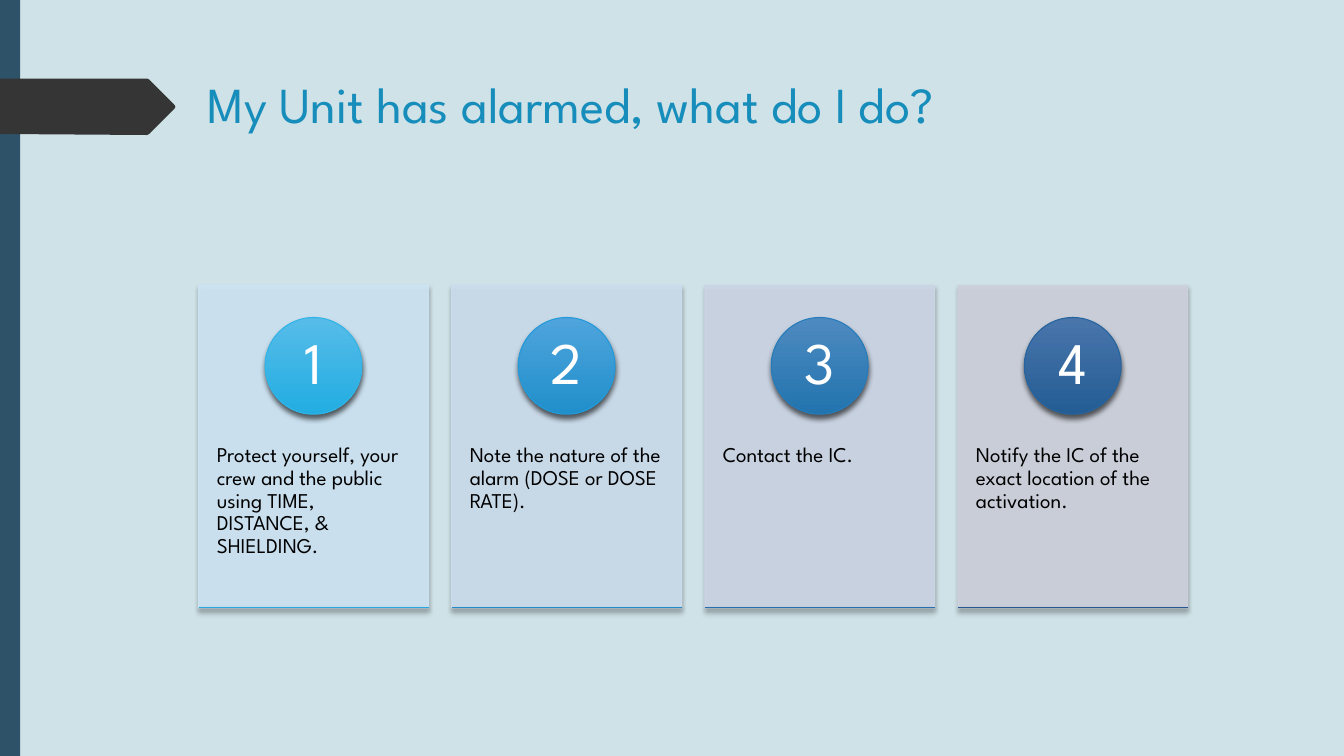
import pptx
import pptx.util
import pptx.dml.color
import pptx.enum.shapes
import pptx.enum.text
import pptx.oxml.ns
from lxml import etree

Inches, Pt = pptx.util.Inches, pptx.util.Pt
RGB = pptx.dml.color.RGBColor
KIND = pptx.enum.shapes.MSO_SHAPE
ALIGN = pptx.enum.text.PP_ALIGN
ANCHOR = pptx.enum.text.MSO_ANCHOR
qn = pptx.oxml.ns.qn

FONT = "League Spartan"
SKY = RGB(0xCF, 0xE2, 0xE7)
NAVY = RGB(0x2E, 0x53, 0x69)
COAL = RGB(0x35, 0x35, 0x35)
TEAL = RGB(0x17, 0x8D, 0xBB)
BLACK = RGB(0, 0, 0)
WHITE = RGB(0xFF, 0xFF, 0xFF)

# The card grid, in inches
LEFT, TOP, PITCH = 1.97, 2.83, 2.51
WIDE, HIGH = 2.28, 3.2
DISC, DROP = 0.96, 0.32

# Step text, card, disc top, disc base, disc edge, foot line
STEPS = [
    ("Protect yourself, your crew and the public using TIME, DISTANCE, & SHIELDING.",
     RGB(0xCE, 0xE5, 0xF5), RGB(0x57, 0xBC, 0xE9), RGB(0x22, 0xAD, 0xE2),
     RGB(0x31, 0xB4, 0xE6), RGB(0x28, 0xA7, 0xE1)),
    ("Note the nature of the alarm (DOSE or DOSE RATE).",
     RGB(0xCC, 0xDD, 0xEE), RGB(0x4F, 0xA4, 0xDD), RGB(0x20, 0x8F, 0xCA),
     RGB(0x22, 0x9A, 0xD9), RGB(0x24, 0x8B, 0xCA)),
    ("Contact the IC.",
     RGB(0xCC, 0xD6, 0xE6), RGB(0x4E, 0x8A, 0xC1), RGB(0x22, 0x74, 0xAE),
     RGB(0x25, 0x7C, 0xBB), RGB(0x26, 0x70, 0xAD)),
    ("Notify the IC of the exact location of the activation.",
     RGB(0xCD, 0xD1, 0xDC), RGB(0x49, 0x75, 0xAB), RGB(0x23, 0x5D, 0x94),
     RGB(0x26, 0x64, 0x9F), RGB(0x26, 0x59, 0x91)),
]
# Corners in hundredths of an inch
FLAG = [(0, 78), (146, 78), (148, 79), (173, 104), (174, 106),
        (173, 108), (148, 133), (146, 134), (0, 133)]


def style(item, **form):
    for key, value in form.items():
        setattr(item, key, value)


def write(shape, text, size, color, pads, anchor=ANCHOR.TOP, align=ALIGN.LEFT, space=0.9):
    """Fill a shape with text; pads are left, top, right and bottom insets in inches."""
    frame = shape.text_frame
    sides = ("margin_left", "margin_top", "margin_right", "margin_bottom")
    style(frame, word_wrap=True, vertical_anchor=anchor,
          **{side: Inches(pad) for side, pad in zip(sides, pads)})
    line = frame.paragraphs[0]
    style(line, alignment=align, line_spacing=space)
    run = line.add_run()
    run.text = text
    style(run.font, name=FONT, size=Pt(size))
    run.font.color.rgb = color


def paint(shape, color):
    shape.shadow.inherit = False
    shape.fill.solid()
    shape.fill.fore_color.rgb = color
    shape.line.fill.background()


def edge(shape, color):
    shape.line.color.rgb = color
    shape.line.width = Pt(0.75)


def fade(shape, share):
    """Make the fill and line colours partly clear."""
    for color in shape._element.spPr.findall(".//" + qn("a:srgbClr")):
        etree.SubElement(color, qn("a:alpha"), val=str(share * 1000))


def shade(shape, share, blur, dist):
    """Cast a black shadow straight down."""
    props = shape._element.spPr
    group = props.find(qn("a:effectLst"))
    if group is None:
        group = etree.SubElement(props, qn("a:effectLst"))
    cast = etree.SubElement(group, qn("a:outerShdw"), blurRad=str(Pt(blur)),
                            dist=str(Pt(dist)), dir="5400000", algn="ctr", rotWithShape="0")
    color = etree.SubElement(cast, qn("a:srgbClr"), val="000000")
    etree.SubElement(color, qn("a:alpha"), val=str(share * 1000))


def add(shapes, kind, *box):
    return shapes.add_shape(kind, *map(Inches, box))


def flag(shapes):
    maker = shapes.build_freeform(*FLAG[0], scale=Inches(0.01))
    maker.add_line_segments(FLAG[1:], close=True)
    paint(maker.convert_to_shape(), COAL)


def head(shapes, text):
    box = shapes.add_textbox(*map(Inches, (1.96, 0.68, 10.62, 1.4)))
    write(box, text, 36, TEAL, (0.1, 0.05, 0.1, 0.05), space=1.0)


def step(shapes, index, text, tint, light, deep, rim, foot):
    left = LEFT + index * PITCH

    card = add(shapes, KIND.RECTANGLE, left, TOP, WIDE, HIGH)
    paint(card, tint)
    edge(card, tint)
    fade(card, 90)
    shade(card, 25, 3, 2)
    write(card, text, 15, BLACK, (0.18, 1.58, 0.18, 0.42))

    disc = add(shapes, KIND.OVAL, left + (WIDE - DISC) / 2, TOP + DROP, DISC, DISC)
    disc.shadow.inherit = False
    disc.fill.gradient()
    disc.fill.gradient_angle = 270
    for stop, color in zip(disc.fill.gradient_stops, (light, deep)):
        stop.color.rgb = color
    edge(disc, rim)
    shade(disc, 60, 4, 3)
    write(disc, str(index + 1), 42, WHITE, (0.07, 0.01, 0.07, 0.01),
          ANCHOR.MIDDLE, ALIGN.CENTER)

    base = TOP + HIGH
    rule = shapes.add_connector(pptx.enum.shapes.MSO_CONNECTOR.STRAIGHT,
                                *map(Inches, (left, base, left + WIDE, base)))
    edge(rule, foot)
    shade(rule, 60, 4, 3)


def main():
    deck = pptx.Presentation()
    style(deck, slide_width=Inches(13.33), slide_height=Inches(7.5))
    slide = deck.slides.add_slide(deck.slide_layouts[6])
    slide.background.fill.solid()
    slide.background.fill.fore_color.rgb = SKY
    shapes = slide.shapes

    head(shapes, "My Unit has alarmed, what do I do?")
    paint(add(shapes, KIND.RECTANGLE, 0, 0, 0.2, 7.5), NAVY)
    flag(shapes)
    for index, parts in enumerate(STEPS):
        step(shapes, index, *parts)
    deck.save("out.pptx")


if __name__ == "__main__":
    main()
